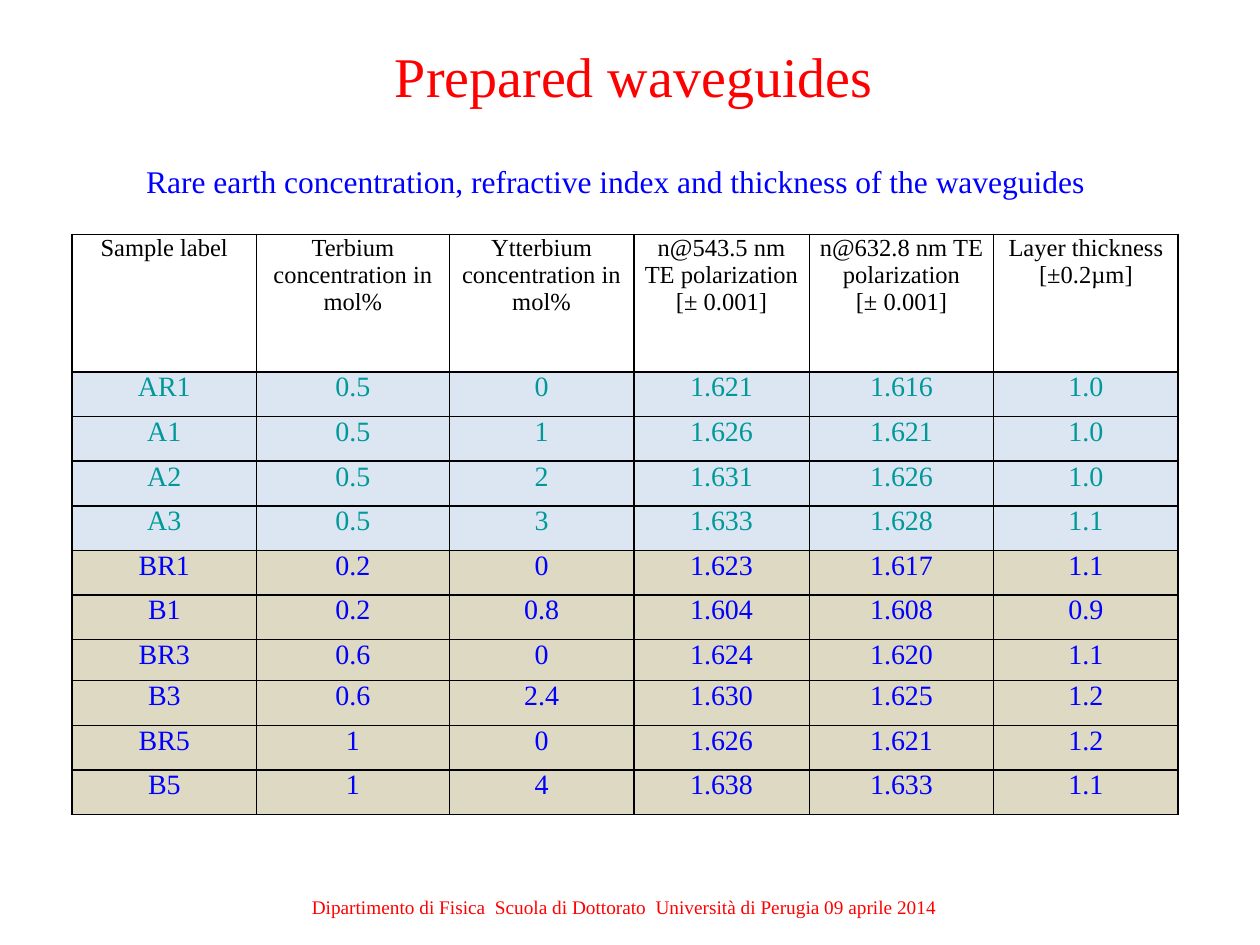
from dataclasses import dataclass

from lxml.etree import SubElement
from pptx import Presentation
from pptx.dml.color import RGBColor as Color
from pptx.enum.text import PP_ALIGN as Align
from pptx.oxml.ns import qn
from pptx.util import Pt


@dataclass(frozen=True)
class Theme:
    font: str = "Times New Roman"
    red: str = "FF0000"
    blue: str = "0000FF"
    teal: str = "009999"
    black: str = "000000"
    white: str = "FFFFFF"
    pale_blue: str = "DCE6F2"
    sand: str = "DDD9C3"
    title_size: float = 32
    subtitle_size: float = 18
    body_size: float = 16
    header_size: float = 14
    footer_size: float = 11
    border_width: float = 1
    cell_margin: float = 5


class SlideBuilder:
    def __init__(self, slide, theme):
        self.slide = slide
        self.theme = theme

    def fill_text(self, text_frame, text, size, color, align):
        text_frame.text = text
        for paragraph in text_frame.paragraphs:
            paragraph.alignment = align
            for run in paragraph.runs:
                run.font.name = self.theme.font
                run.font.size = Pt(size)
                run.font.color.rgb = Color.from_string(color)

    def text(self, box, text, size, color, align=Align.CENTER, wrap=True):
        shape = self.slide.shapes.add_textbox(*map(Pt, box))
        shape.text_frame.word_wrap = wrap
        self.fill_text(shape.text_frame, text, size, color, align)

    def borders(self, cell):
        properties = cell._tc.get_or_add_tcPr()
        for index, side in enumerate(("a:lnL", "a:lnR", "a:lnT", "a:lnB")):
            line = SubElement(properties, qn(side), w=str(Pt(self.theme.border_width)))
            fill = SubElement(line, qn("a:solidFill"))
            SubElement(fill, qn("a:srgbClr"), val=self.theme.black)
            properties.insert(index, line)

    def cell(self, cell, text, size, color, fill):
        cell.margin_left = cell.margin_right = Pt(self.theme.cell_margin)
        cell.margin_top = cell.margin_bottom = 0
        cell.fill.solid()
        cell.fill.fore_color.rgb = Color.from_string(fill)
        self.borders(cell)
        self.fill_text(cell.text_frame, text, size, color, Align.CENTER)

    def table(self, left, top, widths, heights, groups):
        frame = self.slide.shapes.add_table(
            len(heights), len(widths), Pt(left), Pt(top), Pt(sum(widths)), Pt(sum(heights)))
        table = frame.table
        table.first_row = table.horz_banding = False
        for column, width in zip(table.columns, widths):
            column.width = Pt(width)
        for row, height in zip(table.rows, heights):
            row.height = Pt(height)
        styled_rows = [(row, style) for rows, style in groups for row in rows]
        for table_row, (values, style) in zip(table.rows, styled_rows):
            for cell, value in zip(table_row.cells, values):
                self.cell(cell, value, *style)


HEADER = [(
    "Sample label",
    "Terbium concentration in mol%",
    "Ytterbium concentration in mol%",
    "n@543.5 nm TE polarization\n[± 0.001]",
    "n@632.8 nm TE polarization\n[± 0.001]",
    "Layer thickness [±0.2µm]",
)]
A_SAMPLES = [
    ("AR1", "0.5", "0", "1.621", "1.616", "1.0"),
    ("A1", "0.5", "1", "1.626", "1.621", "1.0"),
    ("A2", "0.5", "2", "1.631", "1.626", "1.0"),
    ("A3", "0.5", "3", "1.633", "1.628", "1.1"),
]
B_SAMPLES = [
    ("BR1", "0.2", "0", "1.623", "1.617", "1.1"),
    ("B1", "0.2", "0.8", "1.604", "1.608", "0.9"),
    ("BR3", "0.6", "0", "1.624", "1.620", "1.1"),
    ("B3", "0.6", "2.4", "1.630", "1.625", "1.2"),
    ("BR5", "1", "0", "1.626", "1.621", "1.2"),
    ("B5", "1", "4", "1.638", "1.633", "1.1"),
]


def main():
    presentation = Presentation()
    presentation.slide_width, presentation.slide_height = Pt(720), Pt(540)
    theme = Theme()
    builder = SlideBuilder(presentation.slides.add_slide(presentation.slide_layouts[6]), theme)

    # Footer
    builder.text((70.5, 508.3, 572.5, 21),
                 "Dipartimento di Fisica  Scuola di Dottorato  Università di Perugia 09 aprile 2014",
                 theme.footer_size, theme.red)

    # Table of waveguide samples
    builder.table(
        41.2, 134,
        widths=[105.4, 110.2, 105.4, 100.3, 105.4, 105.4],
        heights=[78.6] + [25.5] * 6 + [23.5] + [25.5] * 3,
        groups=[
            (HEADER, (theme.header_size, theme.black, theme.white)),
            (A_SAMPLES, (theme.body_size, theme.teal, theme.pale_blue)),
            (B_SAMPLES, (theme.body_size, theme.blue, theme.sand)),
        ])

    # Subtitle and title
    builder.text((76.5, 88.8, 556.5, 29),
                 "Rare earth concentration, refractive index and thickness of the waveguides",
                 theme.subtitle_size, theme.blue, Align.LEFT, wrap=False)
    builder.text((121.5, 20.2, 481.5, 46), "Prepared waveguides", theme.title_size, theme.red)

    presentation.save("out.pptx")


if __name__ == "__main__":
    main()
